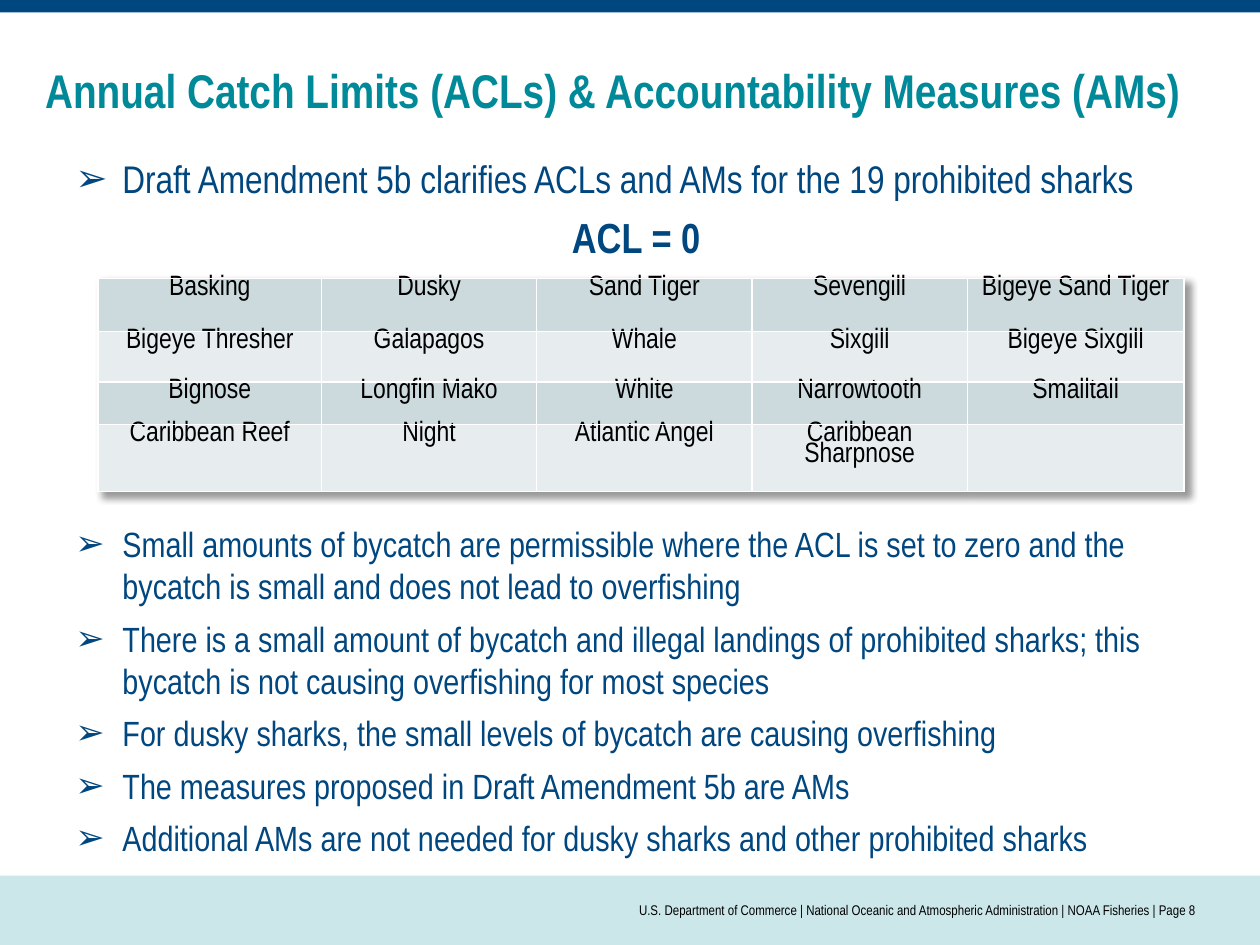
import pptx
import pptx.util
import pptx.dml.color
import pptx.enum.shapes
import pptx.enum.text
import pptx.oxml
import pptx.oxml.ns

Cm, Pt = pptx.util.Cm, pptx.util.Pt
ALIGN = pptx.enum.text.PP_ALIGN
ANCHOR = pptx.enum.text.MSO_ANCHOR
FONT = "Arial Narrow"
NAVY, TEAL, PALE, BLACK, WHITE = "00467F", "008998", "CCE7EA", "000000", "FFFFFF"
BANDS = ["CCDADD", "E7EDEF"]

SHARKS = [
    ["Basking", "Dusky", "Sand Tiger", "Sevengill", "Bigeye Sand Tiger"],
    ["Bigeye Thresher", "Galapagos", "Whale", "Sixgill", "Bigeye Sixgill"],
    ["Bignose", "Longfin Mako", "White", "Narrowtooth", "Smalltail"],
    ["Caribbean Reef", "Night", "Atlantic Angel", "Caribbean Sharpnose", ""],
]
POINTS = [
    "Small amounts of bycatch are permissible where the ACL is set to zero "
    "and the bycatch is small and does not lead to overfishing",
    "There is a small amount of bycatch and illegal landings of prohibited "
    "sharks; this bycatch is not causing overfishing for most species",
    "For dusky sharks, the small levels of bycatch are causing overfishing",
    "The measures proposed in Draft Amendment 5b are AMs",
    "Additional AMs are not needed for dusky sharks and other prohibited sharks",
]
FOOTER = ["U.S. Department of Commerce", "National Oceanic and Atmospheric Administration",
          "NOAA Fisheries", "Page 8"]


def color(code):
    return pptx.dml.color.RGBColor.from_string(code)


def xml(body):
    return pptx.oxml.parse_xml(body.replace(">", " " + pptx.oxml.ns.nsdecls("a") + ">", 1))


def add_bar(slide, top, height, fill):
    bar = slide.shapes.add_shape(pptx.enum.shapes.MSO_SHAPE.RECTANGLE,
                                 0, Cm(top), Cm(25.4), Cm(height))
    bar.shadow.inherit = False
    bar.fill.solid()
    bar.fill.fore_color.rgb = color(fill)
    bar.line.fill.background()


def add_frame(slide, left, top, width, height):
    frame = slide.shapes.add_textbox(Cm(left), Cm(top), Cm(width), Cm(height)).text_frame
    frame.word_wrap = True
    return frame


def add_run(para, text, size, tint, bold=False):
    run = para.add_run()
    run.text = text
    run.font.name = FONT
    run.font.size = Pt(size)
    run.font.bold = bold
    run.font.color.rgb = color(tint)


def set_bullet(para):
    props = para._p.get_or_add_pPr()
    props.set("marL", str(Cm(0.95)))
    props.set("indent", str(-Cm(0.95)))
    props.append(xml('<a:buFont typeface="Arial"/>'.replace("/>", "></a:buFont>")))
    props.append(xml('<a:buChar char="➢"></a:buChar>'))


def add_point(para, text, size):
    para.space_after = Pt(6)
    set_bullet(para)
    add_run(para, text, size, NAVY)


def set_border(cell):
    props = cell._tc.get_or_add_tcPr()
    for spot, side in enumerate("LRTB"):
        props.insert(spot, xml(f'<a:ln{side} w="12700"><a:solidFill>'
                               f'<a:srgbClr val="{WHITE}"/></a:solidFill></a:ln{side}>'))


def fill_cell(cell, text, fill):
    cell.fill.solid()
    cell.fill.fore_color.rgb = color(fill)
    set_border(cell)
    cell.margin_left = cell.margin_right = Cm(0.18)
    cell.margin_top = cell.margin_bottom = 0
    if text:
        para = cell.text_frame.paragraphs[0]
        para.alignment = ALIGN.CENTER
        para.line_spacing = 0.8
        add_run(para, text, 16, BLACK)


def add_grid(slide):
    widths = [4.5, 4.34, 4.34, 4.34, 4.37]
    heights = [1.07, 1.02, 0.86, 1.35]
    table = slide.shapes.add_table(len(heights), len(widths), Cm(1.98), Cm(5.61),
                                   Cm(sum(widths)), Cm(sum(heights))).table
    for col, width in zip(table.columns, widths):
        col.width = Cm(width)
    for row, height in zip(table.rows, heights):
        row.height = Cm(height)
    for r, names in enumerate(SHARKS):
        for c, name in enumerate(names):
            fill_cell(table.cell(r, c), name, BANDS[r % 2])
    # Soft shadow to the lower right
    table._tbl.tblPr.insert(0, xml(
        '<a:effectLst><a:outerShdw blurRad="50800" dist="50800" dir="2700000" algn="tl">'
        '<a:srgbClr val="000000"><a:alpha val="40000"/></a:srgbClr>'
        '</a:outerShdw></a:effectLst>'))


def main():
    deck = pptx.Presentation()
    deck.slide_width, deck.slide_height = Cm(25.4), Cm(19.05)
    slide = deck.slides.add_slide(deck.slide_layouts[6])

    # Bands at foot and head
    add_bar(slide, 17.65, 1.4, PALE)
    add_bar(slide, 0, 0.25, NAVY)

    # Title
    title = add_frame(slide, 0.66, 1.12, 23.47, 1.88)
    add_run(title.paragraphs[0], "Annual Catch Limits (ACLs) & Accountability Measures (AMs)",
            27, TEAL, True)

    # Lead point and limit
    lead = add_frame(slide, 1.27, 3, 23.11, 13.89)
    add_point(lead.paragraphs[0],
              "Draft Amendment 5b clarifies ACLs and AMs for the 19 prohibited sharks", 22)
    limit = lead.add_paragraph()
    limit.alignment = ALIGN.CENTER
    limit.space_after = Pt(6)
    add_run(limit, "ACL = 0", 24, NAVY, True)

    # Footer
    foot = add_frame(slide, 6.35, 17.65, 17.78, 1.4)
    foot.margin_left = foot.margin_right = 0
    foot.vertical_anchor = ANCHOR.MIDDLE
    foot.paragraphs[0].alignment = ALIGN.RIGHT
    add_run(foot.paragraphs[0], " | ".join(FOOTER), 8, BLACK)

    # Prohibited sharks
    add_grid(slide)

    # Points below the table
    notes = add_frame(slide, 1.27, 10.41, 22.86, 7.09)
    for i, text in enumerate(POINTS):
        para = notes.add_paragraph() if i else notes.paragraphs[0]
        add_point(para, text, 20)

    deck.save("out.pptx")


if __name__ == "__main__":
    main()
